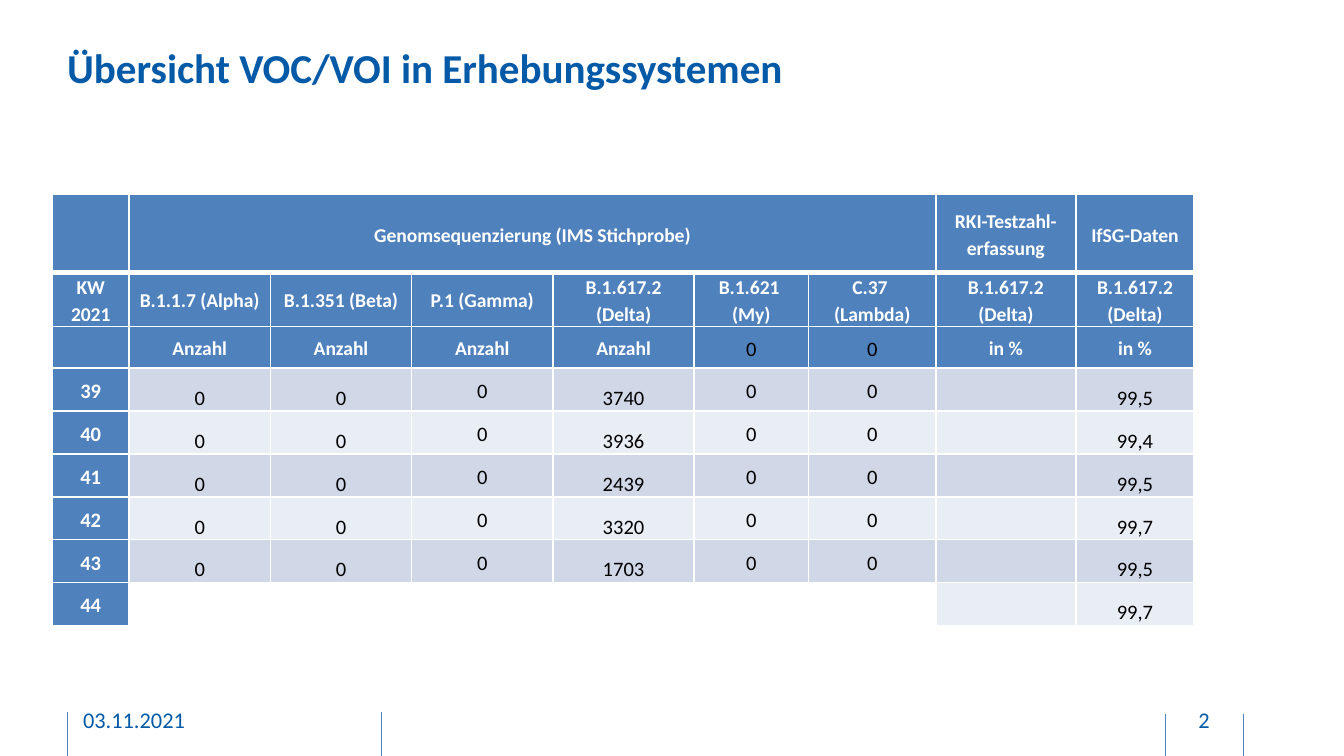
import lxml.etree
import pptx
import pptx.dml.color
import pptx.enum.shapes
import pptx.enum.text
import pptx.oxml.ns
import pptx.util

Cm = pptx.util.Cm
ALIGN = pptx.enum.text.PP_ALIGN
ANCHOR = pptx.enum.text.MSO_ANCHOR
COLORS = {"title": "045AA6", "header": "4F81BD", "odd": "D0D8E8",
          "even": "E9EDF4", "white": "FFFFFF", "black": "000000"}


def write(frame, text, size, color, bold=False, align=ALIGN.LEFT, spacing=1.0):
    """Put one formatted paragraph into a text frame."""
    para = frame.paragraphs[0]
    para.text = text
    para.alignment = align
    para.line_spacing = spacing
    for span in para.runs:
        formats = {"name": "Calibri", "size": pptx.util.Pt(size), "bold": bold}
        for key, value in formats.items():
            setattr(span.font, key, value)
        span.font.color.rgb = pptx.dml.color.RGBColor.from_string(COLORS[color])


def add_border(cell, side, points):
    properties = cell._tc.get_or_add_tcPr()
    line = lxml.etree.SubElement(properties, pptx.oxml.ns.qn("a:ln" + side),
                                 w=str(pptx.util.Pt(points)))
    fill = lxml.etree.SubElement(line, pptx.oxml.ns.qn("a:solidFill"))
    lxml.etree.SubElement(fill, pptx.oxml.ns.qn("a:srgbClr"), val=COLORS["white"])


deck = pptx.Presentation()
deck.slide_width, deck.slide_height = Cm(25.4), Cm(14.29)
page = deck.slides.add_slide(deck.slide_layouts[5])

# Footer
for x, top in [(22.02, 13.49), (7.21, 13.46), (1.27, 13.46), (23.5, 13.49)]:
    line = page.shapes.add_connector(pptx.enum.shapes.MSO_CONNECTOR.STRAIGHT,
                                     Cm(x), Cm(top), Cm(x), Cm(14.29))
    line.line.width = pptx.util.Pt(0.5)
    line.line.color.rgb = pptx.dml.color.RGBColor.from_string(COLORS["header"])
    lxml.etree.SubElement(line._element.spPr, pptx.oxml.ns.qn("a:effectLst"))

for text, left, width, align in [("03.11.2021", 1.57, 5.16, ALIGN.LEFT),
                                 ("2", 22.07, 1.37, ALIGN.CENTER)]:
    box = page.shapes.add_textbox(Cm(left), Cm(13.23), Cm(width), Cm(0.76))
    frame = box.text_frame
    formats = {"word_wrap": True, "margin_left": 0, "margin_right": 0,
               "vertical_anchor": ANCHOR.MIDDLE}
    for key, value in formats.items():
        setattr(frame, key, value)
    write(frame, text, 12, "title", align=align)

# Title
title = page.shapes.title
places = {"left": Cm(1.27), "top": Cm(0.28), "width": Cm(22.17), "height": Cm(1.98)}
for key, value in places.items():
    setattr(title, key, value)
formats = {"margin_left": 0, "margin_right": 0, "margin_top": 0, "margin_bottom": 0,
           "word_wrap": True, "vertical_anchor": ANCHOR.MIDDLE}
for key, value in formats.items():
    setattr(title.text_frame, key, value)
write(title.text_frame, "Übersicht VOC/VOI in Erhebungssystemen", 22, "title", bold=True)

# Table
delta = "B.1.617.2 (Delta)"
rows = [
    ["", "Genomsequenzierung (IMS Stichprobe)", "", "", "", "", "",
     "RKI-Testzahl-erfassung", "IfSG-Daten"],
    ["KW 2021", "B.1.1.7 (Alpha)", "B.1.351 (Beta)", "P.1 (Gamma)", delta,
     "B.1.621 \v(My)", "C.37 \v(Lambda)", delta, delta],
    ["", "Anzahl", "Anzahl", "Anzahl", "Anzahl", "0", "0", "in %", "in %"],
]
weeks = [("39", "3740", "99,5"), ("40", "3936", "99,4"), ("41", "2439", "99,5"),
         ("42", "3320", "99,7"), ("43", "1703", "99,5")]
for week, delta_count, delta_share in weeks:
    rows.append([week, "0", "0", "0", delta_count, "0", "0", "", delta_share])
rows.append(["44"] + [""] * 7 + ["99,7"])

widths = [1.45] + [2.67] * 4 + [2.16, 2.41, 2.64, 2.24]
heights = [1.47, 1.02, 0.79] + [0.81] * 6
table = page.shapes.add_table(len(rows), len(widths), Cm(0.99), Cm(3.68),
                              Cm(sum(widths)), Cm(sum(heights))).table
table.first_row = table.horz_banding = False
for column, width in zip(table.columns, widths):
    column.width = Cm(width)
for row, height in zip(table.rows, heights):
    row.height = Cm(height)
table.cell(0, 1).merge(table.cell(0, 6))

for i, row in enumerate(rows):
    for j, text in enumerate(row):
        cell = table.cell(i, j)
        header = i < 3 or j == 0
        share = i >= 3 and j == 8
        at_bottom = i >= 3 and j in (1, 2, 4, 8)
        side_margin = Cm(0.03 if share else 0.13)
        formats = {"margin_left": side_margin, "margin_right": side_margin,
                   "margin_top": Cm(0.03 if share else 0), "margin_bottom": 0,
                   "vertical_anchor": ANCHOR.BOTTOM if at_bottom else ANCHOR.MIDDLE}
        for key, value in formats.items():
            setattr(cell, key, value)

        for side in "LRTB":
            thick = (i, side) in ((0, "B"), (1, "T"))
            add_border(cell, side, 3 if thick else 1)
        if i == 8 and 1 <= j <= 6:
            cell.fill.background()
        else:
            fill = "header" if header else "odd" if i % 2 else "even"
            cell.fill.solid()
            cell.fill.fore_color.rgb = pptx.dml.color.RGBColor.from_string(COLORS[fill])

        if text:
            white = header and text != "0"
            write(cell.text_frame, text, 10.5 if i < 3 and white else 11,
                  "white" if white else "black", white, ALIGN.CENTER,
                  1.0 if share else 1.15)

deck.save("out.pptx")
